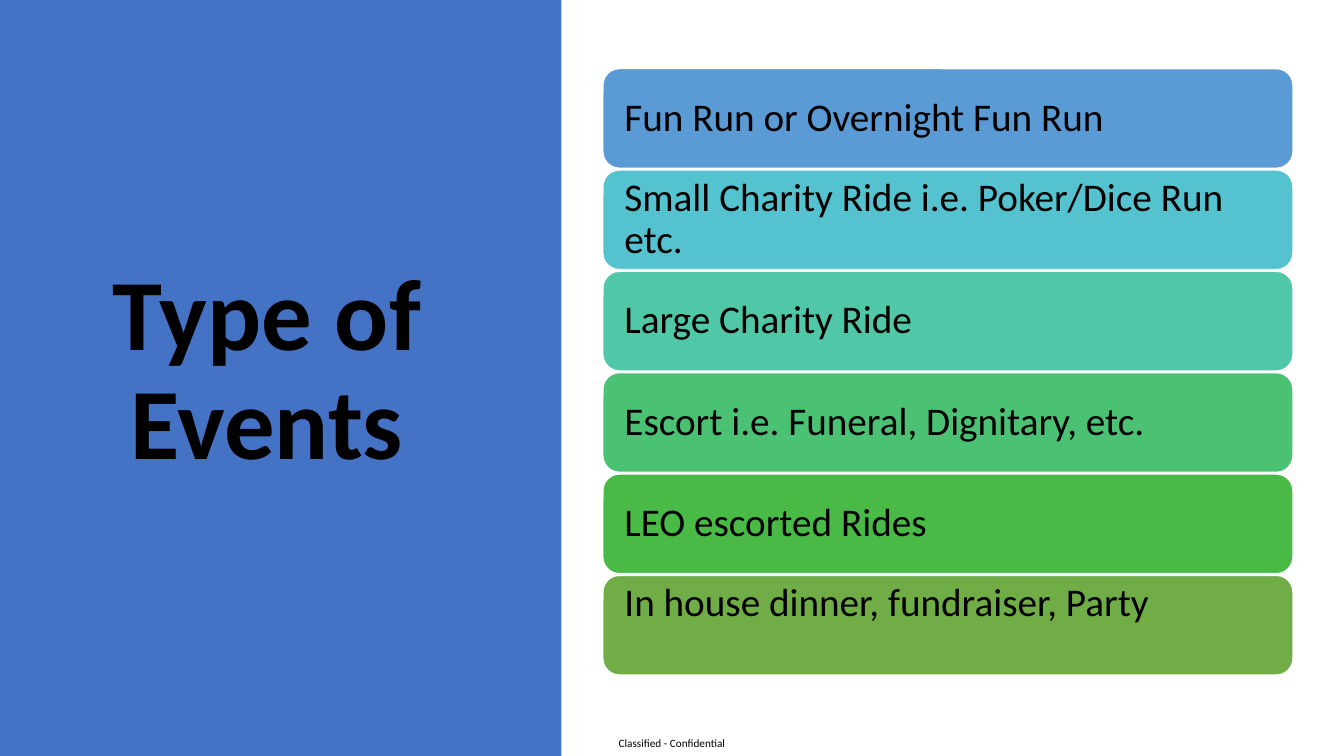
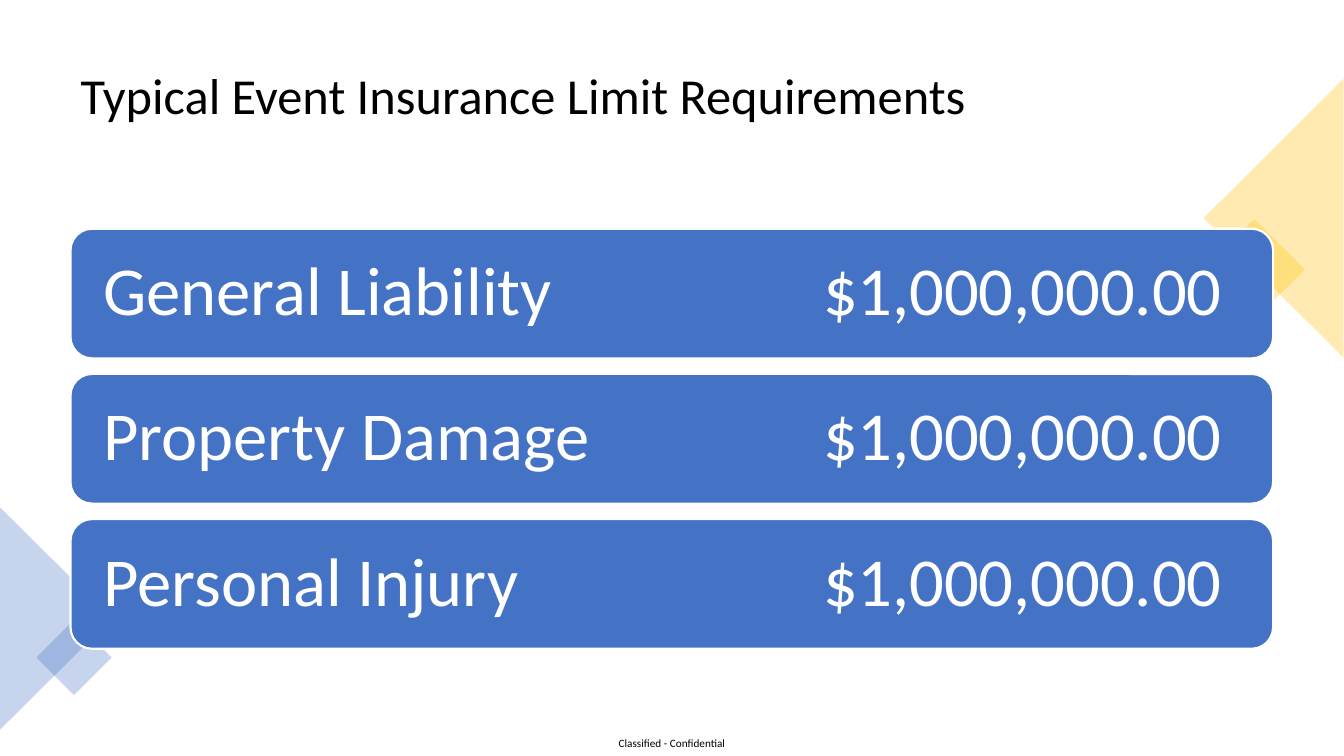
import pptx
import pptx.dml.color
import pptx.enum.shapes
import pptx.enum.text
import pptx.oxml
import pptx.oxml.ns
import pptx.util

Pt = pptx.util.Pt
RGB = pptx.dml.color.RGBColor.from_string
SHAPE = pptx.enum.shapes.MSO_SHAPE
ALIGN = pptx.enum.text.PP_ALIGN
qn = pptx.oxml.ns.qn

COLOURS = {
    "blue": "4472C4",
    "gold": "FFC000",
    "black": "000000",
    "white": "FFFFFF",
}
FRAME_FORMAT = {
    "word_wrap": True,
    "auto_size": pptx.enum.text.MSO_AUTO_SIZE.NONE,
    "vertical_anchor": pptx.enum.text.MSO_ANCHOR.MIDDLE,
}


def write(frame, text, size, colour="black", bold=False, align=ALIGN.LEFT,
          spacing=0.9, margins=None):
    """Fill a text frame with one paragraph; margins maps frame margins to points."""
    frame.text = text
    paragraph = frame.paragraphs[0]
    lengths = {name: Pt(value) for name, value in (margins or {}).items()}
    formats = (
        (frame, FRAME_FORMAT | lengths),
        (paragraph, {"alignment": align, "line_spacing": spacing}),
        (paragraph.runs[0].font, {"name": "Calibri", "size": Pt(size), "bold": bold}),
    )
    for target, values in formats:
        for name, value in values.items():
            setattr(target, name, value)
    paragraph.runs[0].font.color.rgb = RGB(COLOURS[colour])
    return paragraph


def add_block(slide, kind, box, fill, line_width=0, rotation=0, opacity=100):
    block = slide.shapes.add_shape(kind, *map(Pt, box))
    block.shadow.inherit = False
    block.rotation = rotation
    block.fill.solid()
    block.fill.fore_color.rgb = RGB(fill)
    if opacity < 100:
        colour = block.element.spPr.find(qn("a:solidFill")).find(qn("a:srgbClr"))
        alpha = pptx.oxml.parse_xml(
            f'<a:alpha {pptx.oxml.ns.nsdecls("a")} val="{opacity * 1000}"/>')
        colour.append(alpha)
    if line_width:
        block.line.color.rgb = RGB(COLOURS["white"])
        block.line.width = Pt(line_width)
    else:
        block.line.fill.background()
    return block


deck = pptx.Presentation()
deck.slide_width, deck.slide_height = Pt(960), Pt(540)
title_only = deck.slide_layouts[5]
events, limits = [deck.slides.add_slide(title_only) for _ in range(2)]

# The footer is moved to the layout, so that both slides show it
footer = events.shapes.add_textbox(Pt(432), Pt(522), Pt(96), Pt(18))
no_margins = dict.fromkeys(
    ("margin_left", "margin_right", "margin_top", "margin_bottom"), 0)
write(footer.text_frame, "Classified - Confidential", 8, align=ALIGN.CENTER,
      spacing=1.0, margins=no_margins)
title_only.shapes.element.append(footer.element)

titles = (
    (events, "Type of Events", (41, 49, 299.5, 433.5),
     {"size": 72, "bold": True, "align": ALIGN.CENTER}),
    (limits, "Typical Event Insurance Limit Requirements", (50.4, 25.2, 859, 89.3),
     {"size": 36}),
)
for slide, text, box, style in titles:
    title = slide.shapes.title
    title.left, title.top, title.width, title.height = map(Pt, box)
    write(title.text_frame, text, **style)

# Slide 1: types of events beside a blue panel
panel = add_block(events, SHAPE.RECTANGLE, (0, 0, 401, 540), COLOURS["blue"])
events.shapes.element.insert(2, panel.element)  # behind the title

event_types = (
    ("Fun Run or Overnight Fun Run", "5B9BD5", 0),
    ("Small Charity Ride i.e. Poker/Dice Run etc.", "55C3CF", 0),
    ("Large Charity Ride", "50C8A7", 0),
    ("Escort i.e. Funeral, Dignitary, etc.", "4BC174", 0),
    ("LEO escorted Rides", "4ABA46", 0),
    ("In house dinner, fundraiser, Party", "70AD47", 31),
)
for row, (event_type, fill, bottom) in enumerate(event_types):
    bar = add_block(events, SHAPE.ROUNDED_RECTANGLE,
                    (430.6, 49 + row * 72.4, 493, 71.2), fill, line_width=1)
    write(bar.text_frame, event_type, 28,
          margins=no_margins | {"margin_left": 12, "margin_right": 12,
                                "margin_bottom": bottom})

# Slide 2: insurance limits over translucent corner decorations
decorations = (
    (SHAPE.RECTANGLE, (870.5, 167, 51, 51), "gold", 45),
    (SHAPE.ISOSCELES_TRIANGLE, (810, 105.8, 199.5, 100), "gold", 270),
    (SHAPE.ISOSCELES_TRIANGLE, (-39.6, 401.8, 159, 80), "blue", 90),
    (SHAPE.RECTANGLE, (33.8, 450.7, 38, 38), "blue", 45),
)
for kind, box, colour, rotation in decorations:
    add_block(limits, kind, box, COLOURS[colour], rotation=rotation, opacity=30)

coverages = ("General Liability", "Property Damage", "Personal Injury")
for row, coverage in enumerate(coverages):
    bar = add_block(limits, SHAPE.ROUNDED_RECTANGLE,
                    (50.4, 163.4 + row * 103.7, 859, 92.6), COLOURS["blue"],
                    line_width=1.5)
    paragraph = write(bar.text_frame, f"{coverage}\t$1,000,000.00", 49, "white",
                      margins=no_margins | {"margin_left": 19, "margin_right": 19})
    tabs = pptx.oxml.parse_xml(
        f'<a:tabLst {pptx.oxml.ns.nsdecls("a")}>'
        f'<a:tab pos="{Pt(514)}" algn="l"/></a:tabLst>')
    paragraph.runs[0].font  # run formatting is complete before the tab stop
    paragraph._p.get_or_add_pPr().append(tabs)

deck.save("out.pptx")
